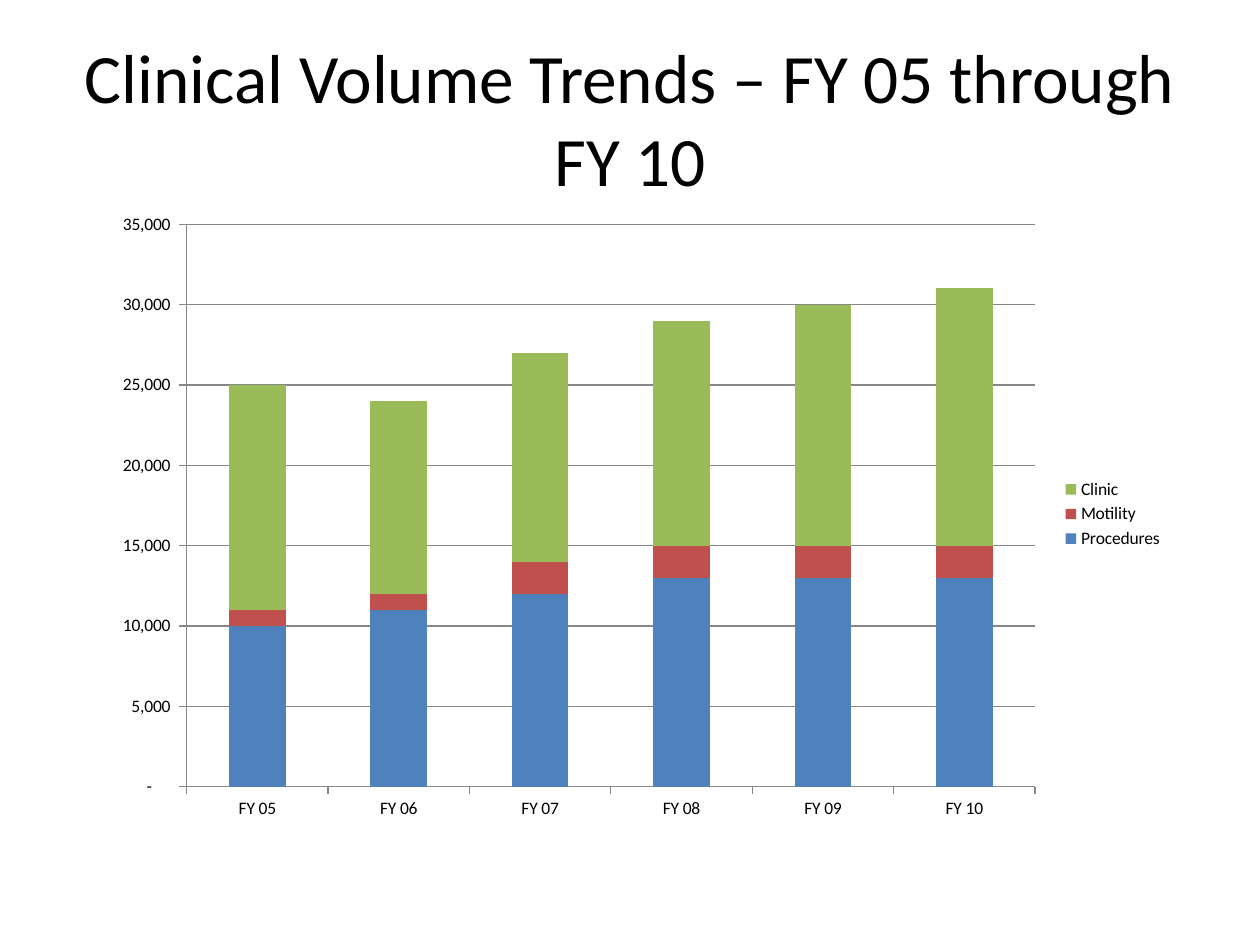
from lxml import etree
from pptx import Presentation
from pptx.chart.data import CategoryChartData as Data
from pptx.dml.color import RGBColor as RGB
from pptx.enum.chart import XL_CHART_TYPE as Kind
from pptx.enum.chart import XL_LEGEND_POSITION as Side
from pptx.enum.chart import XL_TICK_MARK as Tick
from pptx.enum.text import MSO_ANCHOR as Anchor
from pptx.enum.text import PP_ALIGN as Align
from pptx.oxml.ns import qn
from pptx.util import Emu, Pt

# Content
TITLE = "Clinical Volume Trends – FY 05 through FY 10"
YEARS = ["FY 05", "FY 06", "FY 07", "FY 08", "FY 09", "FY 10"]
SERIES = [
    ("Procedures", "4F81BD", [10000, 11000, 12000, 13000, 13000, 13000]),
    ("Motility", "C0504D", [1000, 1000, 2000, 2000, 2000, 2000]),
    ("Clinic", "9BBB59", [14000, 12000, 13000, 14000, 15000, 16000]),
]
FORMAT = '_(* #,##0_);_(* \\(#,##0\\);_(* "-"??_);_('
FONT, INK, RULE = "Calibri", "000000", "878787"
PLOT = {"x": 0.094, "y": 0.04, "w": 0.777, "h": 0.893}

# Places in px: left, top, width, height
PAGE = (1260, 945)
HEAD = (63, 38, 1134, 158)
CHART = (84, 199, 1092, 630)


def px(*nums):
    return [Emu(n * 914400 // 126) for n in nums]


def hue(code):
    return RGB.from_string(code)


def style(font, size, color=INK):
    font.name, font.size = FONT, Pt(size)
    font.color.rgb = hue(color)


def add_text(slide, text, box, size, color=INK, align=Align.CENTER):
    frame = slide.shapes.add_textbox(*px(*box)).text_frame
    frame.word_wrap = True
    frame.vertical_anchor = Anchor.MIDDLE
    para = frame.paragraphs[0]
    para.alignment = align
    run = para.add_run()
    run.text = text
    style(run.font, size, color)


def rule(line):
    line.color.rgb = hue(RULE)
    line.width = Pt(0.75)


def set_plot(chart):
    area = chart.plots[0]._element.getparent()
    for old in area.findall(qn("c:layout")):
        area.remove(old)
    layout = etree.Element(qn("c:layout"))
    area.insert(0, layout)
    manual = etree.SubElement(layout, qn("c:manualLayout"))
    parts = {"layoutTarget": "inner", "xMode": "edge", "yMode": "edge", **PLOT}
    for name, val in parts.items():
        etree.SubElement(manual, qn("c:" + name)).set("val", str(val))


def add_chart(slide):
    data = Data(number_format=FORMAT)
    data.categories = YEARS
    for name, _, vals in SERIES:
        data.add_series(name, vals)
    chart = slide.shapes.add_chart(
        Kind.COLUMN_STACKED, *px(*CHART), data).chart
    style(chart.font, 10)
    chart.has_title = False

    # Columns
    plot = chart.plots[0]
    plot.gap_width, plot.overlap = 150, 100
    plot.vary_by_categories = False
    for bar, (_, color, _) in zip(plot.series, SERIES):
        bar.format.fill.solid()
        bar.format.fill.fore_color.rgb = hue(color)

    # Axes
    years, count = chart.category_axis, chart.value_axis
    for axis in (years, count):
        axis.major_tick_mark = Tick.OUTSIDE
        axis.minor_tick_mark = Tick.NONE
        rule(axis.format.line)
    count.minimum_scale, count.maximum_scale = 0, 35000
    count.major_unit = 5000
    count.has_major_gridlines = True
    rule(count.major_gridlines.format.line)
    count.tick_labels.number_format = FORMAT
    count.tick_labels.number_format_is_linked = False

    # Legend
    chart.has_legend = True
    chart.legend.position = Side.RIGHT
    chart.legend.include_in_layout = False
    set_plot(chart)


def main():
    deck = Presentation()
    deck.slide_width, deck.slide_height = px(*PAGE)
    slide = deck.slides.add_slide(deck.slide_layouts[6])
    add_text(slide, TITLE, HEAD, size=39.6)
    add_chart(slide)
    deck.save("out.pptx")


if __name__ == "__main__":
    main()
